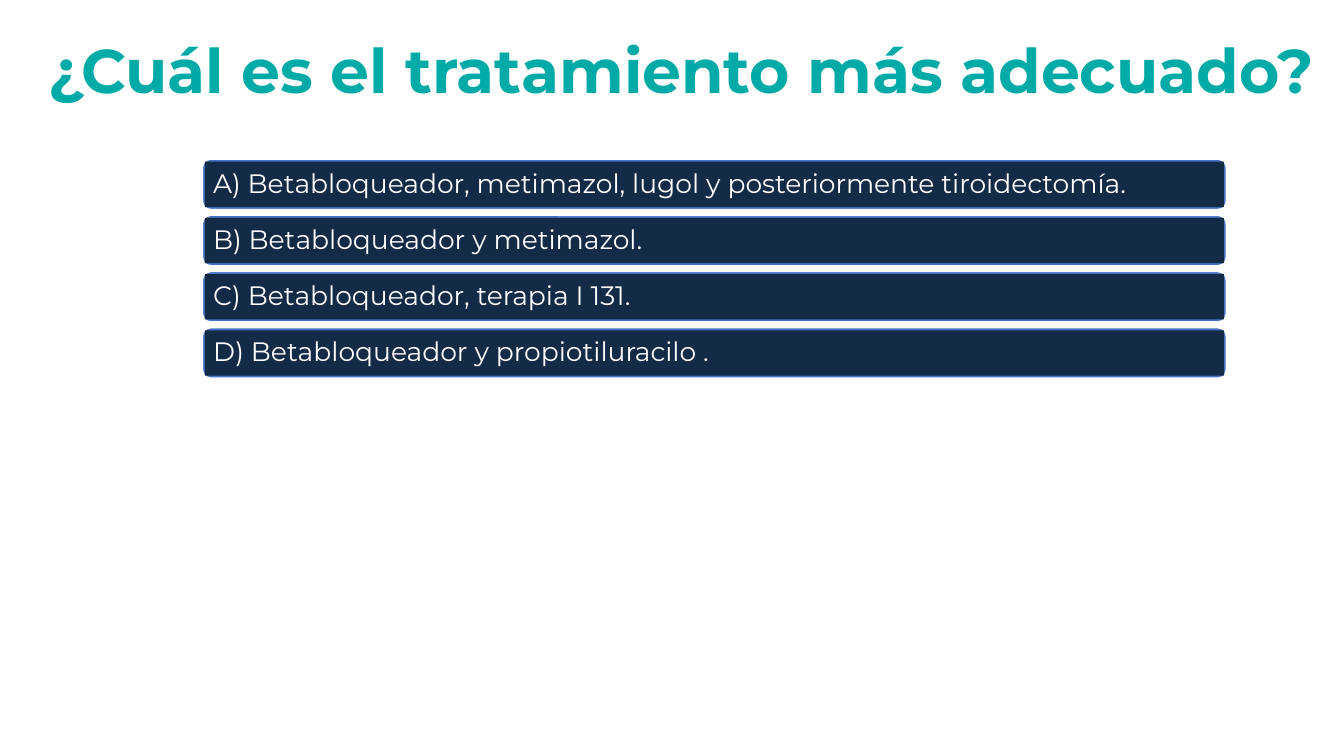
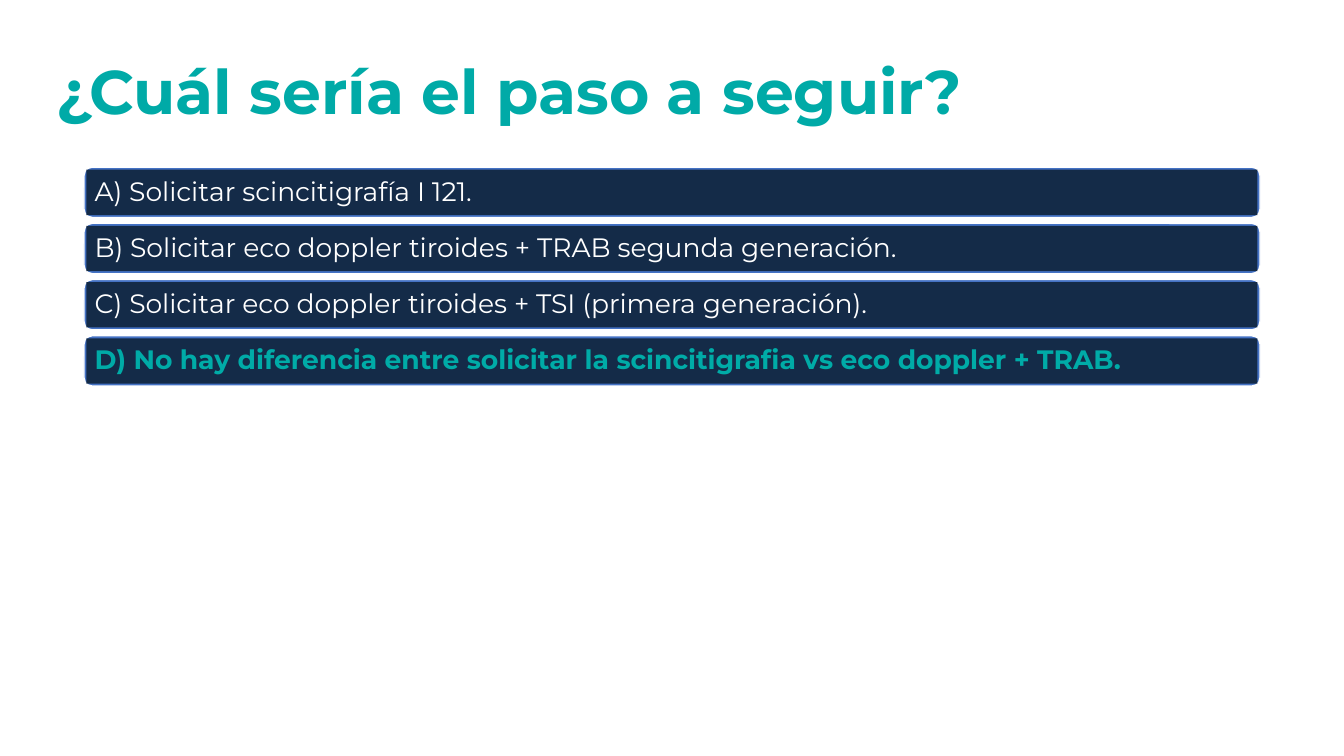
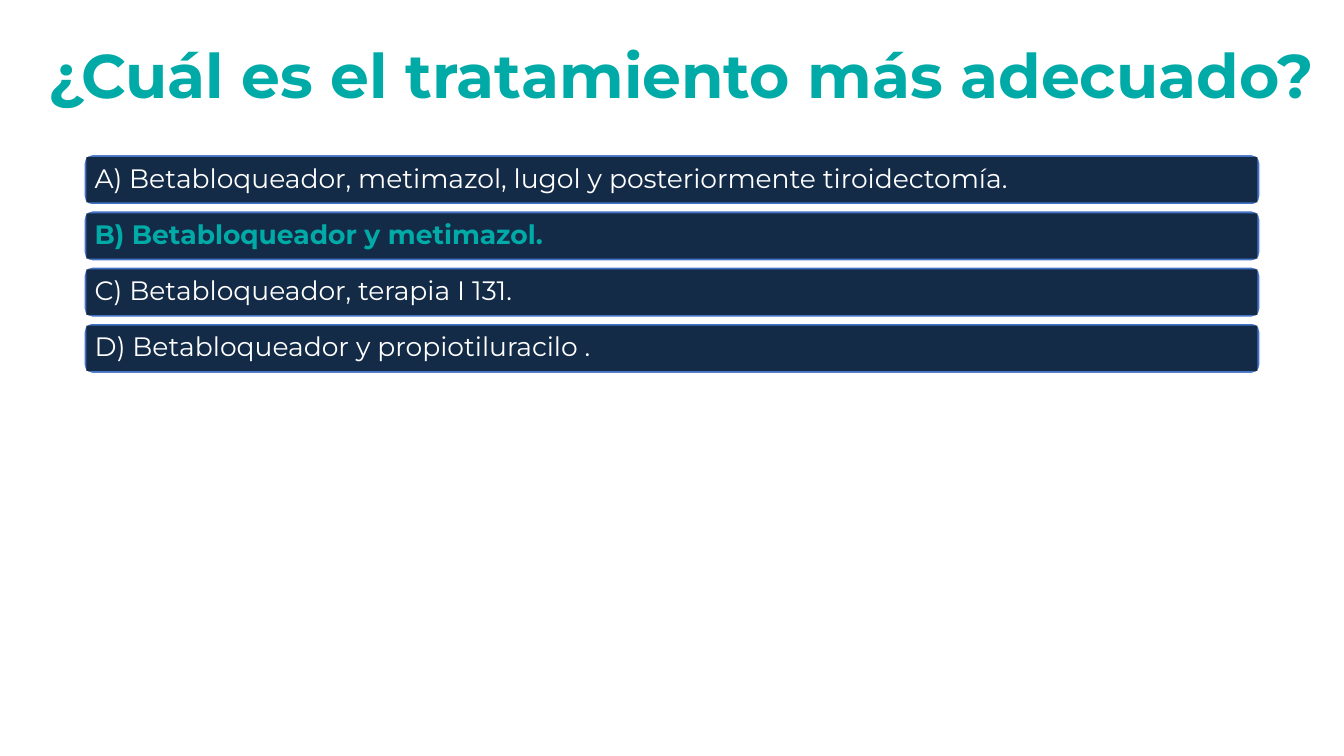
import dataclasses

import pptx
import pptx.dml.color
import pptx.enum.shapes
import pptx.enum.text
import pptx.util

COLUMNS, ROWS = 160, 90
WIDTH, HEIGHT = pptx.util.Inches(13.333), pptx.util.Inches(7.5)
SHAPES = pptx.enum.shapes.MSO_SHAPE


@dataclasses.dataclass(frozen=True)
class Theme:
    font: str = "Montserrat"
    title: str = "00AAA7"
    answer: str = "00ABA7"
    panel: str = "142B48"
    frame: str = "4472C4"
    white: str = "FFFFFF"
    title_size: int = 44
    option_size: int = 19


@dataclasses.dataclass(frozen=True)
class Area:
    column: float
    row: float
    columns: float
    rows: float

    def inset(self, margin: float) -> "Area":
        return Area(self.column + margin, self.row + margin,
                    self.columns - 2 * margin, self.rows - 2 * margin)


@dataclasses.dataclass(frozen=True)
class Question:
    title: str
    title_area: Area
    first_option: Area
    options: tuple[str, ...]
    answer: int | None = None


THEME = Theme()
OPTION_ROWS = 6
OPTION_PITCH = 6.69
FRAME_MARGIN = 0.3

TREATMENT = "¿Cuál es el tratamiento más adecuado?"
TREATMENT_OPTIONS = (
    "A) Betabloqueador, metimazol, lugol y posteriormente tiroidectomía.",
    "B) Betabloqueador y metimazol.",
    "C) Betabloqueador, terapia I 131.",
    "D) Betabloqueador y propiotiluracilo .",
)
NEXT_STEP_OPTIONS = (
    "A) Solicitar scincitigrafía I 121.",
    "B) Solicitar eco doppler tiroides + TRAB segunda generación.",
    "C) Solicitar eco doppler tiroides + TSI (primera generación).",
    "D) No hay diferencia entre solicitar la scincitigrafia vs eco doppler + TRAB.",
)
QUESTIONS = (
    Question(TREATMENT, Area(5.16, 0, 154.84, 17.4),
             Area(24.1, 18.95, 121.9, OPTION_ROWS), TREATMENT_OPTIONS),
    Question("¿Cuál sería el paso a seguir?", Area(6.1, 2.5, 138, 17.4),
             Area(10, 19.9, 140, OPTION_ROWS), NEXT_STEP_OPTIONS, answer=3),
    Question(TREATMENT, Area(5.16, 0.7, 154.84, 17.4),
             Area(10, 18.4, 140, OPTION_ROWS), TREATMENT_OPTIONS, answer=1),
)


def assign(target, values: dict) -> None:
    for name, value in values.items():
        setattr(target, name, value)


def bounds(area: Area) -> dict[str, int]:
    return {
        "left": round(area.column * WIDTH / COLUMNS),
        "top": round(area.row * HEIGHT / ROWS),
        "width": round(area.columns * WIDTH / COLUMNS),
        "height": round(area.rows * HEIGHT / ROWS),
    }


def write(box, text: str, size: int, colour: str, bold: bool, margin: float) -> None:
    frame = box.text_frame
    inset = pptx.util.Inches(margin)
    assign(frame, {
        "text": text,
        "word_wrap": True,
        "auto_size": pptx.enum.text.MSO_AUTO_SIZE.NONE,
        "vertical_anchor": pptx.enum.text.MSO_ANCHOR.MIDDLE,
        "margin_left": inset, "margin_right": inset,
        "margin_top": inset, "margin_bottom": inset,
    })
    para = frame.paragraphs[0]
    assign(para, {"alignment": pptx.enum.text.PP_ALIGN.LEFT, "line_spacing": 0.9})
    span = para.runs[0]
    assign(span.font, {"name": THEME.font, "size": pptx.util.Pt(size), "bold": bold})
    span.font.color.rgb = pptx.dml.color.RGBColor.from_string(colour)


def add_panel(page, kind, area: Area, fill: str):
    box = page.shapes.add_shape(kind, **bounds(area))
    box.shadow.inherit = False
    box.fill.solid()
    box.fill.fore_color.rgb = pptx.dml.color.RGBColor.from_string(fill)
    box.line.fill.background()
    return box


def add_option(page, text: str, area: Area, is_answer: bool) -> None:
    border = add_panel(page, SHAPES.ROUNDED_RECTANGLE, area, THEME.frame)
    border.line.color.rgb = pptx.dml.color.RGBColor.from_string(THEME.white)
    border.line.width = pptx.util.Pt(1)
    label = add_panel(page, SHAPES.RECTANGLE, area.inset(FRAME_MARGIN), THEME.panel)
    colour = THEME.answer if is_answer else THEME.white
    write(label, text, THEME.option_size, colour, is_answer, 0.08)


def add_question(deck, question: Question) -> None:
    page = deck.slides.add_slide(deck.slide_layouts.get_by_name("Title Only"))
    title = page.shapes.title
    assign(title, bounds(question.title_area))
    write(title, question.title, THEME.title_size, THEME.title, True, 0.05)
    first = question.first_option
    for index, text in enumerate(question.options):
        area = dataclasses.replace(first, row=first.row + index * OPTION_PITCH)
        add_option(page, text, area, index == question.answer)


def main() -> None:
    deck = pptx.Presentation()
    assign(deck, {"slide_width": WIDTH, "slide_height": HEIGHT})
    for question in QUESTIONS:
        add_question(deck, question)
    deck.save("out.pptx")


if __name__ == "__main__":
    main()
